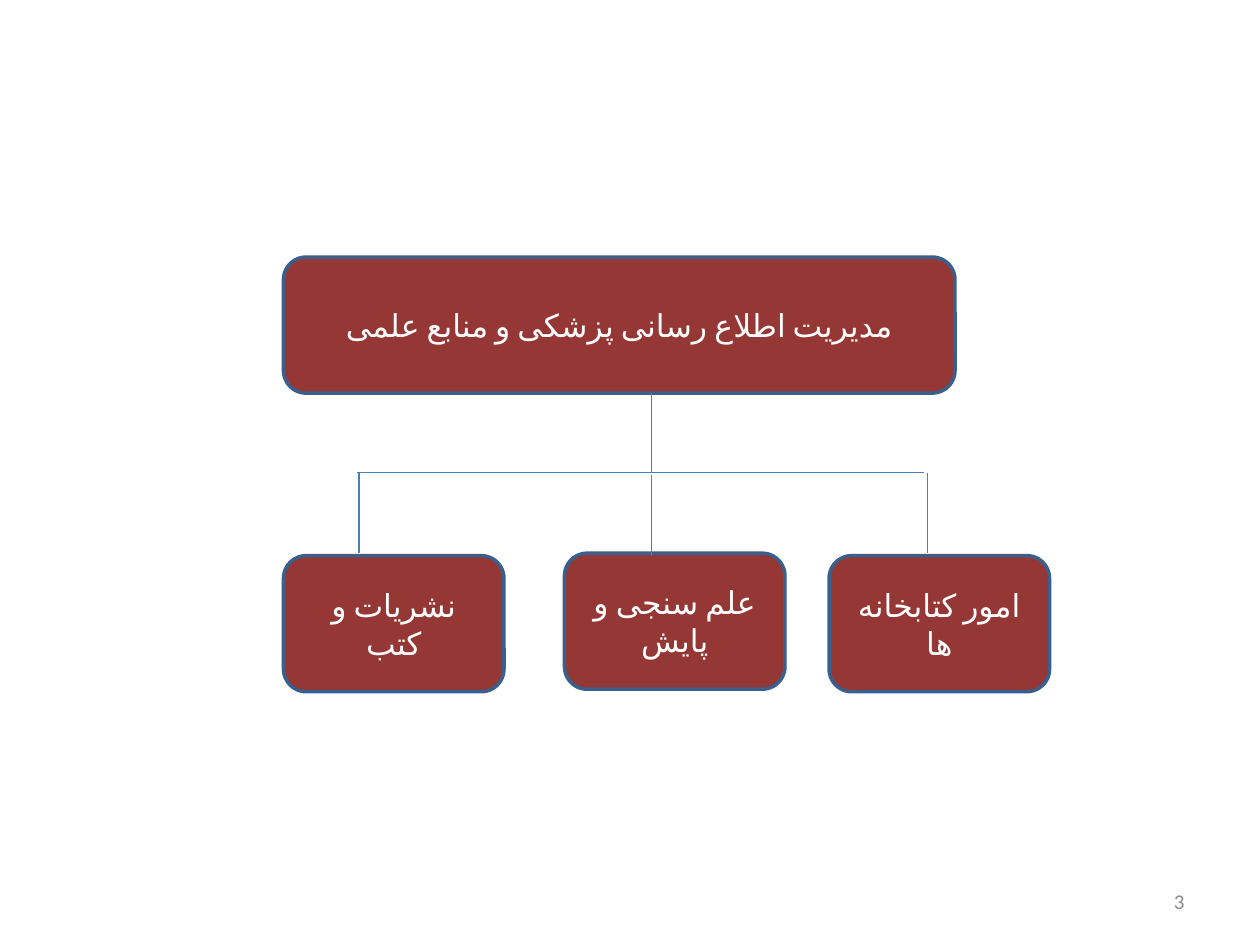
"""Build an organisation chart slide: one management unit and its three departments."""
from pptx import Presentation
from pptx.dml.color import RGBColor
from pptx.enum.lang import MSO_LANGUAGE_ID as LANGUAGE
from pptx.enum.shapes import MSO_CONNECTOR as CONNECTOR, MSO_SHAPE as SHAPE
from pptx.enum.text import MSO_ANCHOR as ANCHOR, PP_ALIGN as ALIGN
from pptx.oxml.ns import qn
from pptx.util import Inches, Pt

MAROON = RGBColor(0x95, 0x37, 0x35)
NAVY = RGBColor(0x3A, 0x5F, 0x8C)
BLUE = RGBColor(0x4B, 0x7E, 0xBC)
WHITE = RGBColor(0xFF, 0xFF, 0xFF)
GREY = RGBColor(0x8C, 0x8C, 0x8C)

FONT = "Calibri"
UNIT_FORMAT = {"name": FONT, "size": Pt(18), "language_id": LANGUAGE.FARSI}
NUMBER_FORMAT = {"name": FONT, "size": Pt(12)}

BOX_HEIGHT, UNIT_WIDTH, DEPARTMENT_WIDTH = 1.08, 5.33, 1.75
UNIT = ("مدیریت اطلاع رسانی پزشکی و منابع علمی", 2.25, 2.04)
DEPARTMENTS = [
    ("نشریات و کتب", 2.25, 4.41),
    ("علم سنجی و پایش", 4.48, 4.39),
    ("امور کتابخانه ها", 6.58, 4.41),
]
TRUNK_X, BUS_Y, BUS_LEFT, BUS_RIGHT = 5.17, 3.75, 2.83, 7.33
DROPS = [(2.85, BUS_Y), (TRUNK_X, 3.77), (7.36, BUS_Y)]
DROP_LENGTH = 0.64
PAGE_NUMBER = "3"


def write(frame, text, align, color, font_format):
    frame.word_wrap = True
    frame.vertical_anchor = ANCHOR.MIDDLE
    paragraph = frame.paragraphs[0]
    paragraph.alignment = align
    run = paragraph.add_run()
    run.text = text
    run.font.color.rgb = color
    for name, value in font_format.items():
        setattr(run.font, name, value)
    properties = run.font._element
    properties.append(properties.makeelement(qn("a:cs"), {"typeface": FONT}))


def add_unit(slide, text, left, top, width):
    unit = slide.shapes.add_shape(
        SHAPE.ROUNDED_RECTANGLE, *map(Inches, (left, top, width, BOX_HEIGHT)))
    unit.shadow.inherit = False
    unit.fill.solid()
    unit.fill.fore_color.rgb = MAROON
    unit.line.color.rgb = NAVY
    unit.line.width = Pt(2)
    write(unit.text_frame, text, ALIGN.CENTER, WHITE, UNIT_FORMAT)


def add_link(slide, *ends):
    link = slide.shapes.add_connector(CONNECTOR.STRAIGHT, *map(Inches, ends))
    link.line.color.rgb = BLUE
    link.line.width = Pt(0.75)
    properties = link._element.spPr
    properties.append(properties.makeelement(qn("a:effectLst"), {}))


def main():
    deck = Presentation()
    deck.slide_width, deck.slide_height = Inches(10), Inches(7.5)
    slide = deck.slides.add_slide(deck.slide_layouts[6])

    page_number = slide.shapes.add_textbox(*map(Inches, (7.17, 6.95, 2.33, 0.4)))
    write(page_number.text_frame, PAGE_NUMBER, ALIGN.RIGHT, GREY, NUMBER_FORMAT)

    add_unit(slide, *UNIT, UNIT_WIDTH)
    for department in DEPARTMENTS:
        add_unit(slide, *department, DEPARTMENT_WIDTH)

    add_link(slide, TRUNK_X, UNIT[2] + BOX_HEIGHT, TRUNK_X, BUS_Y)
    add_link(slide, BUS_LEFT, BUS_Y, BUS_RIGHT, BUS_Y)
    for x, top in DROPS:
        add_link(slide, x, top, x, top + DROP_LENGTH)

    deck.save("out.pptx")


if __name__ == "__main__":
    main()
